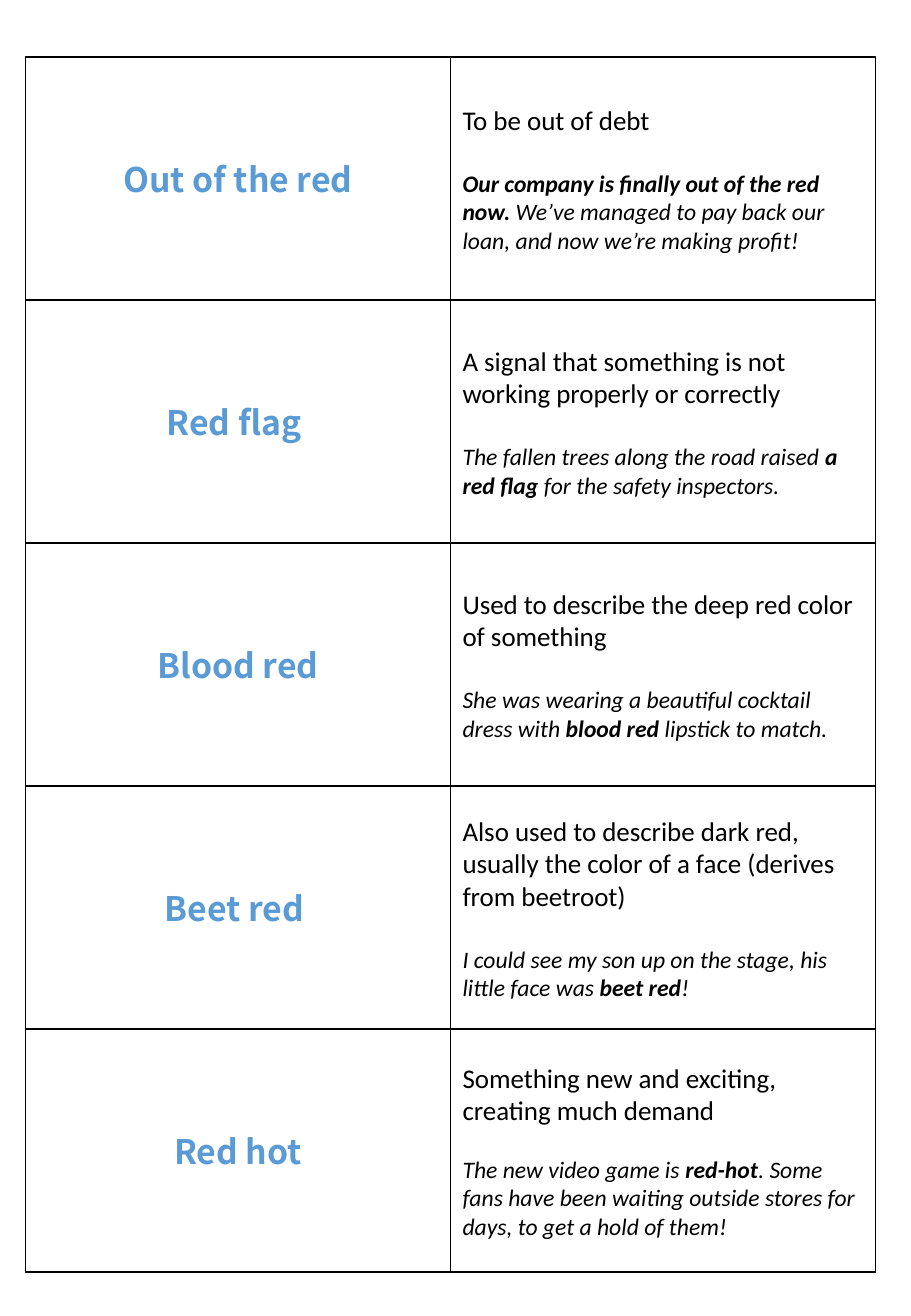
from pptx import Presentation
from pptx.dml.color import RGBColor
from pptx.enum.shapes import MSO_SHAPE
from pptx.enum.text import MSO_ANCHOR, PP_ALIGN
from pptx.util import Inches, Pt

LEFT, TOP = 0.21, 0.47
CARD_WIDTH, CARD_HEIGHT = 3.5, 2
BLACK, WHITE, BLUE = "000000", "FFFFFF", "5B9BD5"

# Idiom, meaning, example (asterisks enclose the bold words), gap in points
IDIOMS = [
    ("Out of the red", "To be out of debt",
     "*Our company is finally out of the red now.* We’ve managed to pay back "
     "our loan, and now we’re making profit!", 19.5),
    ("Red flag ", "A signal that something is not working properly or correctly",
     "The fallen trees along the road raised *a red flag* for the safety "
     "inspectors.", 19.5),
    ("Blood red", "Used to describe the deep red color of something",
     "She was wearing a beautiful cocktail dress with* blood red* lipstick to "
     "match.", 19.5),
    ("Beet red ", "Also used to describe dark red, usually the color of a face "
     "(derives from beetroot)",
     "I could see my son up on the stage, his little face was *beet red*!", 19.5),
    ("Red hot", "Something new and exciting, creating much demand",
     "The new video game is *red-hot*. Some fans have been waiting outside "
     "stores for days, to get a hold of them!", 17),
]


def color(hex_string):
    return RGBColor.from_string(hex_string)


def format_font(font, size, hex_string, name="Calibri", bold=False, italic=False):
    font.name, font.size = name, Pt(size)
    font.bold, font.italic = bold, italic
    font.color.rgb = color(hex_string)


def add_card(slide, column, row):
    """Add an outlined card at a grid position and return its text frame."""
    card = slide.shapes.add_shape(
        MSO_SHAPE.RECTANGLE,
        Inches(LEFT + column * CARD_WIDTH), Inches(TOP + row * CARD_HEIGHT),
        Inches(CARD_WIDTH), Inches(CARD_HEIGHT))
    card.shadow.inherit = False
    card.fill.solid()
    card.fill.fore_color.rgb = color(WHITE)
    card.line.color.rgb = color(BLACK)
    card.line.width = Pt(1)
    card.text_frame.word_wrap = True
    card.text_frame.vertical_anchor = MSO_ANCHOR.MIDDLE
    return card.text_frame


def add_idiom_card(slide, row, idiom):
    text_frame = add_card(slide, 0, row)
    text_frame.text = idiom
    paragraph = text_frame.paragraphs[0]
    paragraph.alignment = PP_ALIGN.CENTER
    format_font(paragraph.runs[0].font, 20, BLUE, "Noto Sans CJK KR", bold=True)


def add_meaning_card(slide, row, meaning, example, gap):
    text_frame = add_card(slide, 1, row)
    text_frame.text = meaning
    paragraph = text_frame.paragraphs[0]
    paragraph.alignment = PP_ALIGN.LEFT
    format_font(paragraph.runs[0].font, 16, BLACK)

    paragraph = text_frame.add_paragraph()
    paragraph.alignment = PP_ALIGN.LEFT
    paragraph.space_before = Pt(gap)
    for index, words in enumerate(example.split("*")):
        if words:
            run = paragraph.add_run()
            run.text = words
            format_font(run.font, 14, BLACK, bold=index % 2 == 1, italic=True)


def main():
    presentation = Presentation()
    presentation.slide_width = Inches(7.5)
    presentation.slide_height = Inches(10.83)
    slide = presentation.slides.add_slide(presentation.slide_layouts[6])
    for row, (idiom, meaning, example, gap) in enumerate(IDIOMS):
        add_idiom_card(slide, row, idiom)
        add_meaning_card(slide, row, meaning, example, gap)
    presentation.save("out.pptx")


if __name__ == "__main__":
    main()
